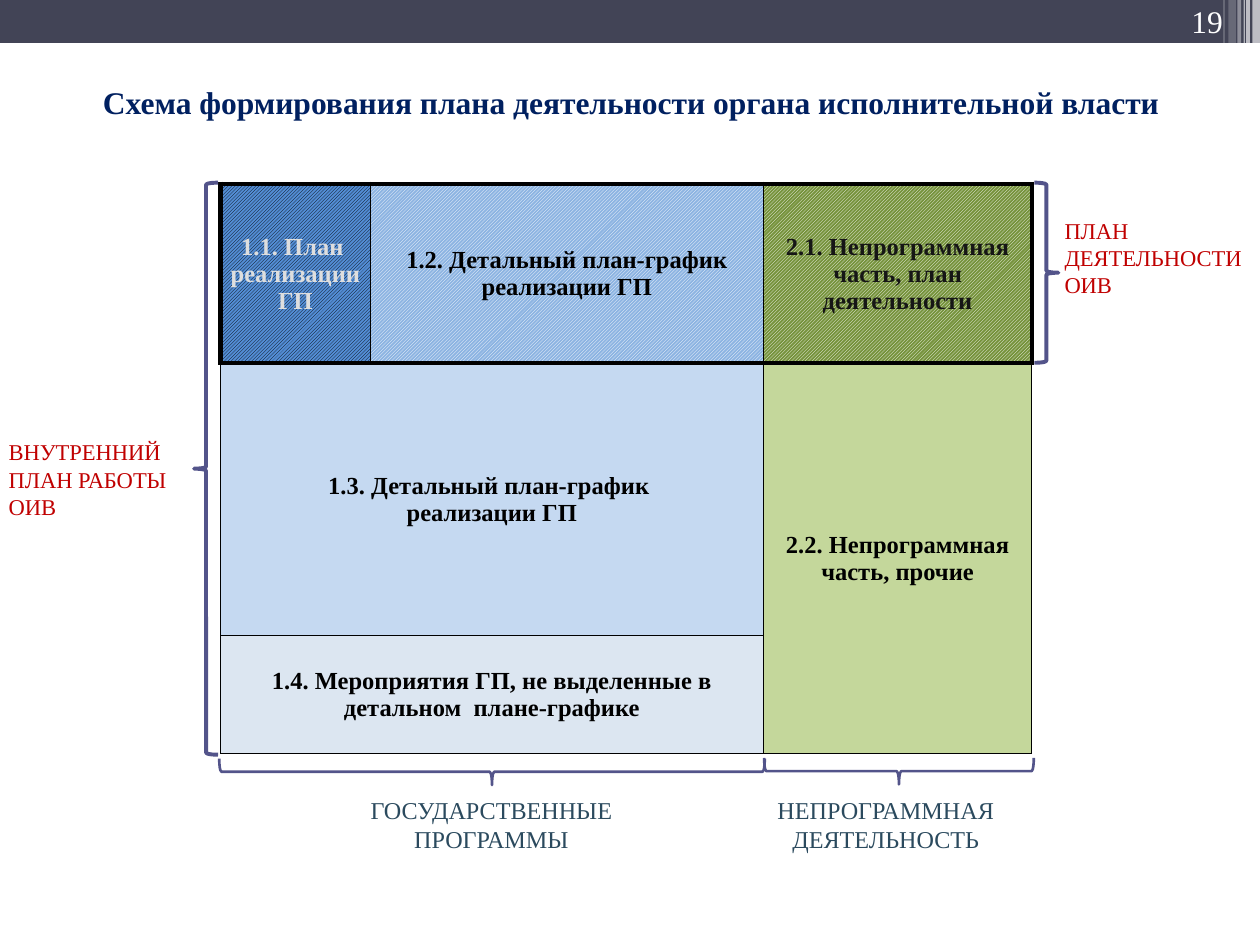
"""Build the slide on how an executive body's activity plan is formed."""
import lxml.etree
import pptx
import pptx.dml.color
import pptx.enum.dml
import pptx.enum.shapes
import pptx.enum.text
import pptx.oxml.ns
import pptx.util

Inches = pptx.util.Inches
Pt = pptx.util.Pt
RGBColor = pptx.dml.color.RGBColor
MSO_SHAPE = pptx.enum.shapes.MSO_SHAPE
PP_ALIGN = pptx.enum.text.PP_ALIGN
MIDDLE = pptx.enum.text.MSO_ANCHOR.MIDDLE
HATCH = pptx.enum.dml.MSO_PATTERN.LIGHT_UPWARD_DIAGONAL
qn = pptx.oxml.ns.qn

WHITE = RGBColor(0xFF, 0xFF, 0xFF)
BLACK = RGBColor(0x00, 0x00, 0x00)
BAND = RGBColor(0x42, 0x44, 0x56)
NAVY = RGBColor(0x00, 0x20, 0x60)
RED = RGBColor(0xC0, 0x00, 0x00)
SLATE = RGBColor(0x2B, 0x4A, 0x5E)
VIOLET = RGBColor(0x53, 0x54, 0x8A)
PALE_GREY = RGBColor(0xDE, 0xDE, 0xDE)
CHARCOAL = RGBColor(0x16, 0x16, 0x16)
BLUE = RGBColor(0x53, 0x8D, 0xD5)
SKY = RGBColor(0x8D, 0xB4, 0xE2)
LIGHT_BLUE = RGBColor(0xC5, 0xD9, 0xF1)
ICE = RGBColor(0xDC, 0xE6, 0xF1)
OLIVE = RGBColor(0x76, 0x93, 0x3C)
LIGHT_GREEN = RGBColor(0xC4, 0xD7, 0x9B)


def write(frame, text, size, color, bold=False, align=PP_ALIGN.LEFT):
    frame.word_wrap = True
    frame.text = text
    for paragraph in frame.paragraphs:
        paragraph.alignment = align
        for run in paragraph.runs:
            run.font.name = "Times New Roman"
            run.font.size = Pt(size)
            run.font.bold = bold
            run.font.color.rgb = color


def add_plain_shape(kind, left, top, width, height):
    shape = slide.shapes.add_shape(kind, Inches(left), Inches(top), Inches(width), Inches(height))
    shape.shadow.inherit = False
    return shape


presentation = pptx.Presentation()
presentation.slide_width = Inches(10)
presentation.slide_height = Inches(7.5)
slide = presentation.slides.add_slide(presentation.slide_layouts[5])

header_bars = [
    (0, 10, 0.34, BAND, 100),
    (9.94, 0.06, 0.68, WHITE, 65),
    (9.89, 0.03, 0.68, WHITE, 65),
    (9.87, 0.01, 0.68, WHITE, 60),
    (9.82, 0.03, 0.68, WHITE, 40),
    (9.75, 0.06, 0.64, WHITE, 20),
    (9.71, 0.01, 0.64, WHITE, 30),
]
for left, width, height, color, opacity in header_bars:
    bar = add_plain_shape(MSO_SHAPE.RECTANGLE, left, 0, width, height)
    bar.fill.solid()
    bar.fill.fore_color.rgb = color
    bar.line.fill.background()
    if opacity < 100:
        color_node = bar._element.spPr.find(qn("a:solidFill"))[0]
        lxml.etree.SubElement(color_node, qn("a:alpha"), val=str(opacity * 1000))

page_number = slide.shapes.add_textbox(Inches(9.34), Inches(0.02), Inches(0.48), Inches(0.3)).text_frame
page_number.margin_left = page_number.margin_right = 0
page_number.margin_top = page_number.margin_bottom = 0
write(page_number, "19", size=18, color=WHITE, align=PP_ALIGN.CENTER)

title = slide.shapes.title
title.left, title.top, title.width, title.height = Inches(0.02), Inches(0.61), Inches(9.98), Inches(0.4)
title.text_frame.vertical_anchor = MIDDLE
write(title.text_frame, "Схема формирования плана деятельности органа исполнительной власти",
      size=18, color=NAVY, bold=True, align=PP_ALIGN.CENTER)

plan = slide.shapes.add_table(3, 3, Inches(1.75), Inches(1.46), Inches(6.44), Inches(4.53)).table
plan.first_row = plan.horz_banding = False
for column, width in zip(plan.columns, (1.19, 3.12, 2.13)):
    column.width = Inches(width)
for row, height in zip(plan.rows, (1.42, 2.16, 0.94)):
    row.height = Inches(height)
plan.cell(1, 0).merge(plan.cell(1, 1))
plan.cell(2, 0).merge(plan.cell(2, 1))
plan.cell(1, 2).merge(plan.cell(2, 2))

plan_parts = [
    (0, 0, "1.1. План \vреализации ГП", PALE_GREY, BLUE, BLACK),
    (0, 1, "1.2. Детальный план-график реализации ГП", BLACK, SKY, WHITE),
    (0, 2, "2.1. Непрограммная часть, план деятельности", CHARCOAL, OLIVE, WHITE),
    (1, 0, "1.3. Детальный план-график \vреализации ГП", BLACK, LIGHT_BLUE, None),
    (1, 2, "2.2. Непрограммная часть, прочие", BLACK, LIGHT_GREEN, None),
    (2, 0, "1.4. Мероприятия ГП, не выделенные в\vдетальном  плане-графике", BLACK, ICE, None),
]
for row, column, text, color, background, hatch_color in plan_parts:
    cell = plan.cell(row, column)
    cell.vertical_anchor = MIDDLE
    cell.margin_left = cell.margin_right = cell.margin_top = Inches(0.01)
    cell.margin_bottom = 0
    write(cell.text_frame, text, size=14, color=color, bold=True, align=PP_ALIGN.CENTER)
    if hatch_color is None:
        cell.fill.solid()
        cell.fill.fore_color.rgb = background
    else:
        cell.fill.patterned()
        cell.fill.pattern = HATCH
        cell.fill.fore_color.rgb = hatch_color
        cell.fill.back_color.rgb = background

for row in range(3):
    for column in range(3):
        heavy_edges = {
            "a:lnL": row == 0 and column == 0,
            "a:lnR": row == 0 and column == 2,
            "a:lnT": row < 2,
            "a:lnB": row == 0,
        }
        if row == 1:
            heavy_edges["a:lnT"] = True
        properties = plan.cell(row, column)._tc.get_or_add_tcPr()
        for position, (edge, heavy) in enumerate(heavy_edges.items()):
            border = lxml.etree.Element(qn(edge), w=str(Pt(3 if heavy else 0.5)))
            border_fill = lxml.etree.SubElement(border, qn("a:solidFill"))
            lxml.etree.SubElement(border_fill, qn("a:srgbClr"), val=str(BLACK))
            properties.insert(position, border)

braces = [
    (MSO_SHAPE.RIGHT_BRACE, 8.21, 1.45, 0.19, 1.43, 0, 2.25),
    (MSO_SHAPE.LEFT_BRACE, 1.54, 1.45, 0.19, 4.54, 0, 2.25),
    (MSO_SHAPE.LEFT_BRACE, 3.8, 3.96, 0.21, 4.33, 270, 1.5),
    (MSO_SHAPE.LEFT_BRACE, 7.03, 5.05, 0.21, 2.14, 270, 1.5),
]
for kind, left, top, width, height, rotation, weight in braces:
    brace = add_plain_shape(kind, left, top, width, height)
    brace.rotation = rotation
    brace.fill.background()
    brace.line.color.rgb = VIOLET
    brace.line.width = Pt(weight)

brace_labels = [
    (8.35, 1.67, 1.85, 0.75, "ПЛАН\nДЕЯТЕЛЬНОСТИ ОИВ", 12.9, RED, PP_ALIGN.LEFT),
    (-0.03, 3.43, 1.91, 0.75, "ВНУТРЕННИЙ ПЛАН РАБОТЫ\nОИВ", 12.9, RED, PP_ALIGN.LEFT),
    (2.72, 6.26, 2.36, 0.57, "ГОСУДАРСТВЕННЫЕ ПРОГРАММЫ", 13.8, SLATE, PP_ALIGN.CENTER),
    (5.85, 6.26, 2.36, 0.57, "НЕПРОГРАММНАЯ\vДЕЯТЕЛЬНОСТЬ", 13.8, SLATE, PP_ALIGN.CENTER),
]
for left, top, width, height, text, size, color, align in brace_labels:
    label = slide.shapes.add_textbox(Inches(left), Inches(top), Inches(width), Inches(height))
    write(label.text_frame, text, size=size, color=color, align=align)

presentation.save("out.pptx")
